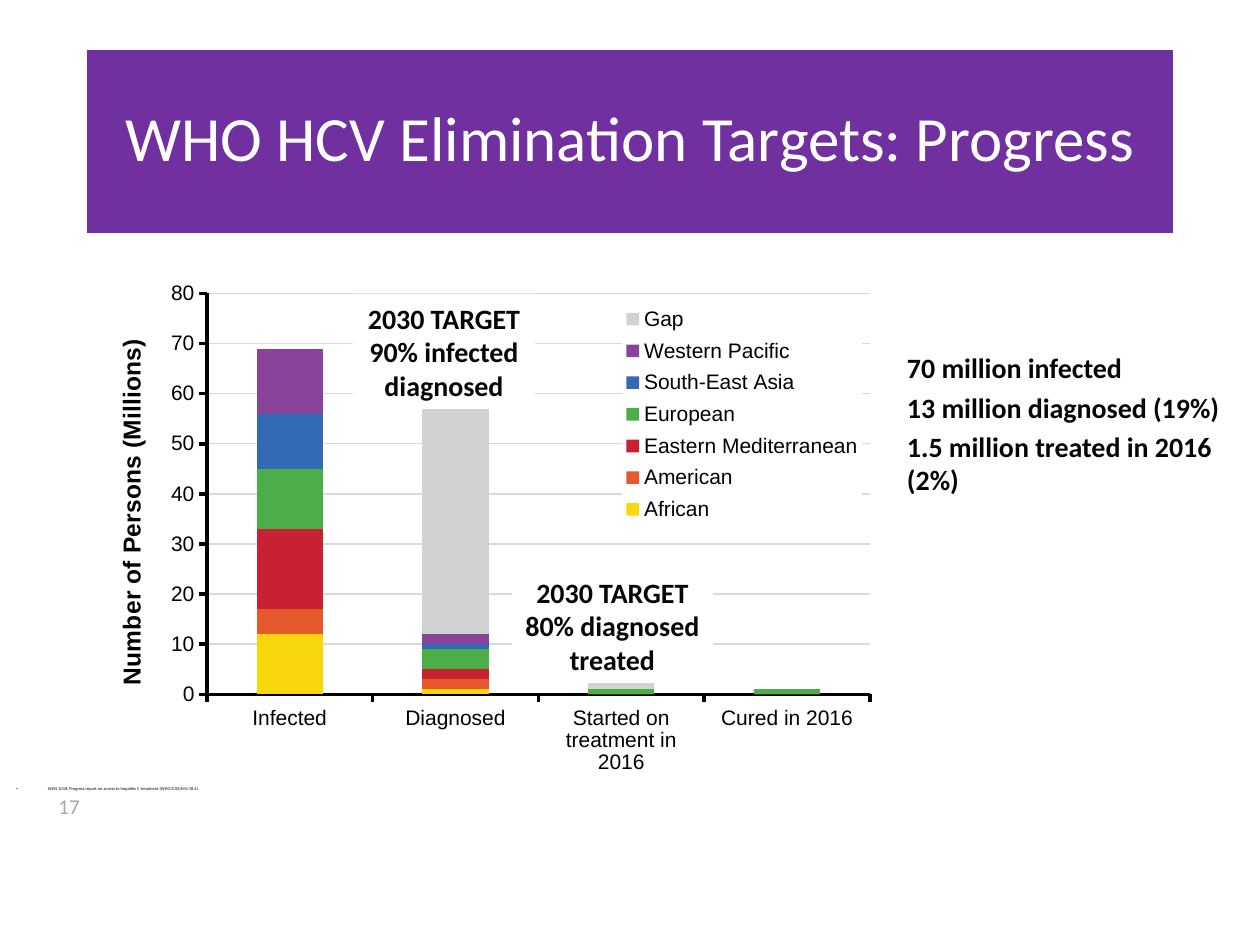
from lxml.etree import SubElement
from pptx import Presentation
from pptx.chart.data import CategoryChartData
from pptx.dml.color import RGBColor
from pptx.enum.chart import XL_CHART_TYPE, XL_LEGEND_POSITION, XL_TICK_MARK
from pptx.enum.shapes import MSO_SHAPE
from pptx.enum.text import MSO_ANCHOR, PP_ALIGN
from pptx.oxml import parse_xml
from pptx.oxml.ns import nsdecls, qn
from pptx.util import Emu, Pt

REGIONS = [
    ("African", "F8D70C", (12, 1, 0, 0)),
    ("American", "E7592D", (5, 2, 0, 0)),
    ("Eastern Mediterranean", "C82132", (16, 2, 0, 0)),
    ("European", "4CAE49", (12, 4, 1, 1)),
    ("South-East Asia", "336AB6", (11, 1, 0, 0)),
    ("Western Pacific", "89449A", (13, 2, 0, 0)),
    ("Gap", "D0D2D3", (0, 50, 9, 0)),
]
STAGES = ["Infected", "Diagnosed", "Started on treatment in 2016", "Cured in 2016"]
FINDINGS = ["70 million infected", "13 million diagnosed (19%)",
            "1.5 million treated in 2016 (2%)"]
TARGETS = [
    ((353, 294, 182, 115), ["2030 TARGET", "90% infected", "diagnosed"]),
    ((512, 568, 201, 115), ["2030 TARGET", "80% diagnosed", "treated"]),
]


def px(length):
    """Turn pixels into EMU."""
    return Emu(round(length * 914400 / 126))


def color(code):
    """Turn a hex string into a colour."""
    return RGBColor.from_string(code)


def set_font(font, size, code, name="Calibri", bold=False):
    """Apply one text style."""
    font.size, font.name, font.bold = Pt(size), name, bold
    font.color.rgb = color(code)


def set_layout(part, inner=False, **fractions):
    """Fix the place of a chart part as fractions of the chart."""
    for old in part.findall(qn("c:layout")):
        part.remove(old)
    layout = parse_xml(f"<c:layout {nsdecls('c')}/>")
    manual = SubElement(layout, qn("c:manualLayout"))
    values = {"xMode": "edge", "yMode": "edge", **fractions}
    if inner:
        values = {"layoutTarget": "inner", **values}
    for tag, value in values.items():
        SubElement(manual, qn(f"c:{tag}")).set("val", str(value))
    part.insert(0 if inner else 1, layout)


class SlideBuilder:
    """Hold the style and the current slide."""

    ink, dark, purple, white = "000000", "070605", "7030A0", "FFFFFF"

    def __init__(self, deck):
        """Add a title-only slide."""
        self.slide = deck.slides.add_slide(deck.slide_layouts[5])

    def title(self, box, text):
        """Fill the title banner."""
        banner = self.slide.shapes.title
        banner.left, banner.top, banner.width, banner.height = map(px, box)
        banner.fill.solid()
        banner.fill.fore_color.rgb = color(self.purple)
        banner.text_frame.text = text
        banner.text_frame.vertical_anchor = MSO_ANCHOR.MIDDLE
        heading = banner.text_frame.paragraphs[0]
        heading.alignment, heading.line_spacing = PP_ALIGN.CENTER, 0.9
        set_font(heading.font, 36, self.white)

    def text(self, box, lines, size, code, bold=False, align=PP_ALIGN.LEFT,
             anchor=MSO_ANCHOR.TOP, inset=True, wrap=True, bullet=False):
        """Add a text box with one paragraph per line."""
        frame = self.slide.shapes.add_textbox(*map(px, box)).text_frame
        frame.word_wrap, frame.vertical_anchor = wrap, anchor
        if not inset:
            frame.margin_left = frame.margin_right = 0
            frame.margin_top = frame.margin_bottom = 0
        for index, line in enumerate(lines):
            paragraph = frame.add_paragraph() if index else frame.paragraphs[0]
            paragraph.text, paragraph.alignment = line, align
            if index:
                paragraph.space_before = Pt(3.2)
            if bullet:
                paragraph.line_spacing = 0.7
                properties = paragraph._p.get_or_add_pPr()
                properties.set("marL", "228600")
                properties.set("indent", "-228600")
                SubElement(properties, qn("a:buChar")).set("char", "•")
            set_font(paragraph.font, size, code, bold=bold)

    def target(self, box, lines):
        """Add a white target label."""
        label = self.slide.shapes.add_shape(MSO_SHAPE.RECTANGLE, *map(px, box))
        label.shadow.inherit = False
        label.fill.solid()
        label.fill.fore_color.rgb = color(self.white)
        label.line.fill.background()
        label.text_frame.word_wrap = False
        paragraph = label.text_frame.paragraphs[0]
        paragraph.alignment = PP_ALIGN.CENTER
        for index, line in enumerate(lines):
            if index:
                paragraph.add_line_break()
            paragraph.add_run().text = line
        set_font(paragraph.font, 16, self.dark, bold=True)

    def axis(self, axis):
        """Style one chart axis."""
        axis.major_tick_mark = XL_TICK_MARK.OUTSIDE
        axis.minor_tick_mark = XL_TICK_MARK.NONE
        axis.format.line.color.rgb = color(self.ink)
        axis.format.line.width = Pt(2)
        set_font(axis.tick_labels.font, 12, self.ink, "Arial")

    def chart(self, box, stages, regions, axis_title):
        """Add the stacked column chart."""
        data = CategoryChartData()
        data.categories = stages
        for name, _, values in regions:
            data.add_series(name, values)
        chart = self.slide.shapes.add_chart(
            XL_CHART_TYPE.COLUMN_STACKED, *map(px, box), data).chart
        set_font(chart.font, 10, self.ink)
        chart.has_title = False
        plot = chart.plots[0]
        plot.gap_width, plot.overlap, plot.vary_by_categories = 150, 100, False
        for series, (_, code, _) in zip(plot.series, regions):
            series.format.fill.solid()
            series.format.fill.fore_color.rgb = color(code)
        scale = chart.value_axis
        for axis in (chart.category_axis, scale):
            self.axis(axis)
        scale.minimum_scale, scale.maximum_scale, scale.major_unit = 0, 80, 10
        scale.major_gridlines.format.line.color.rgb = color("D9D9D9")
        scale.major_gridlines.format.line.width = Pt(0.75)
        scale.axis_title.text_frame.text = axis_title
        set_font(scale.axis_title.text_frame.paragraphs[0].font, 14, self.ink, "Arial", True)
        set_layout(scale.axis_title._element, x=0.03, y=0.12)
        set_layout(chart._chartSpace.chart.plotArea, inner=True, x=0.15, y=0.04, w=0.83, h=0.78)
        self.legend(chart)

    def legend(self, chart):
        """Lay a white legend over the plot."""
        chart.has_legend = True
        legend = chart.legend
        legend.position, legend.include_in_layout = XL_LEGEND_POSITION.LEFT, True
        set_font(legend.font, 12, self.ink, "Arial")
        element = legend._element
        set_layout(element, x=0.67, y=0.05, w=0.3, h=0.45)
        element.find(qn("c:overlay")).addnext(parse_xml(
            f"<c:spPr {nsdecls('c', 'a')}><a:solidFill>"
            f'<a:srgbClr val="{self.white}"/></a:solidFill></c:spPr>'))


def main():
    """Build the slide and save it."""
    deck = Presentation()
    deck.slide_width, deck.slide_height = px(1260), px(945)
    page = SlideBuilder(deck)
    page.title((87, 50, 1086, 183), "WHO HCV Elimination Targets: Progress")
    page.text((4, 784, 217, 14),
              ["WHO 2018: Progress report on access to hepatitis C treatment (WHO/CDS/HIV/18.4)."],
              2.5, page.ink, anchor=MSO_ANCHOR.BOTTOM, wrap=False, bullet=True)
    page.text((0, 793, 92, 26), ["17"], 12, "A6A6A6",
              align=PP_ALIGN.RIGHT, anchor=MSO_ANCHOR.MIDDLE)
    page.text((907, 351, 325, 83), FINDINGS, 16, page.dark, bold=True, inset=False)
    page.chart((87, 273, 799, 514), STAGES, REGIONS, "Number of Persons (Millions)")
    for box, lines in TARGETS:
        page.target(box, lines)
    deck.save("out.pptx")


if __name__ == "__main__":
    main()
